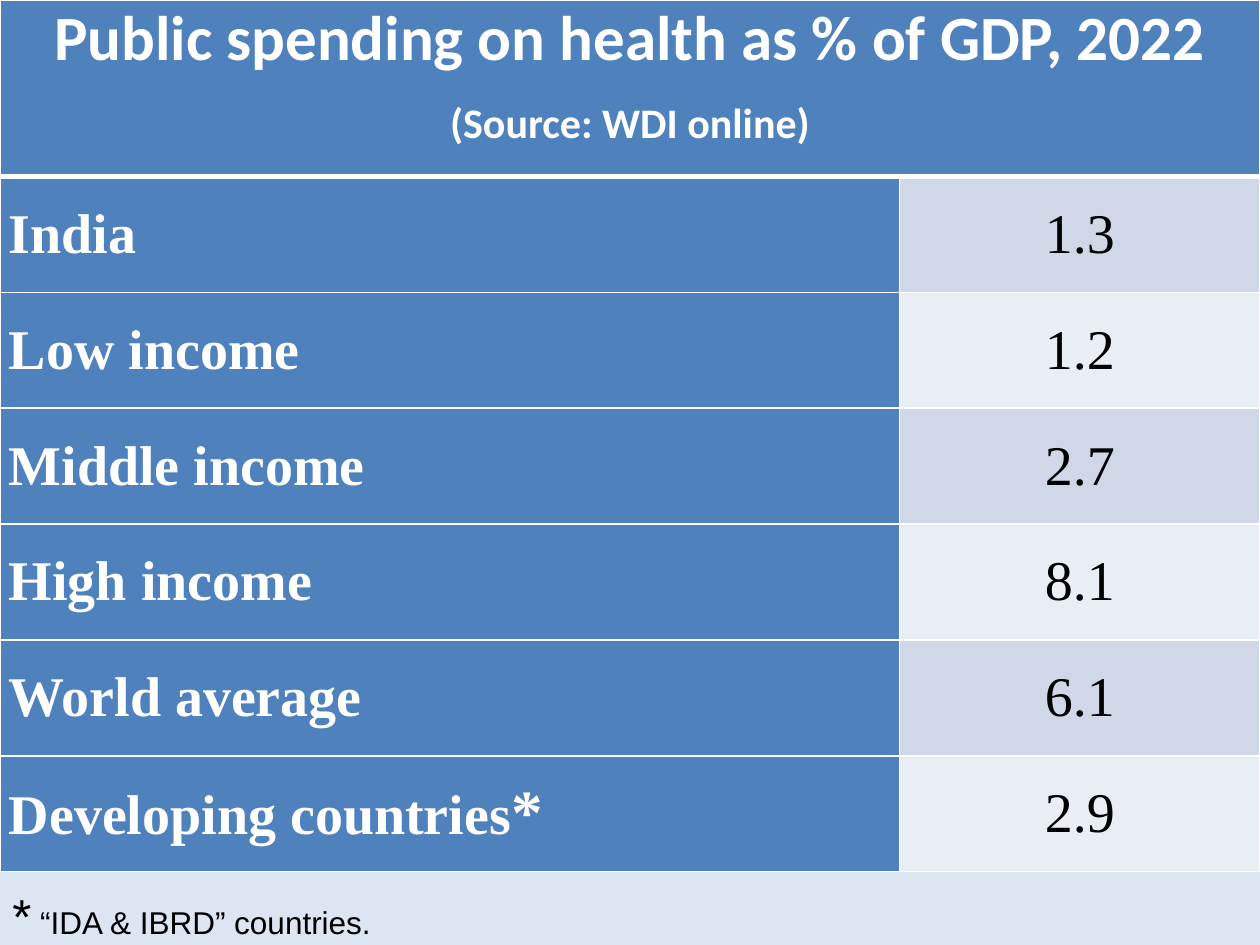
"""Build a slide with a table of public health spending as a share of GDP."""
from dataclasses import dataclass

from lxml.etree import SubElement
from pptx import Presentation
from pptx.dml.color import RGBColor
from pptx.enum.text import MSO_ANCHOR as Anchor, MSO_AUTO_SIZE as AutoSize, PP_ALIGN as Align
from pptx.oxml.ns import qn
from pptx.util import Pt

PX = 9144


@dataclass(frozen=True)
class Theme:
    background: str = "DCE6F2"
    accent: str = "4F81BD"
    bands: tuple = ("D0D8E8", "E9EDF4")
    light: str = "FFFFFF"
    dark: str = "000000"
    heading_font: str = "Calibri"
    table_font: str = "Times New Roman"
    note_font: str = "Arial"
    heading_size: int = 36
    source_size: int = 24
    table_size: int = 32
    star_size: int = 36
    note_star_size: int = 28
    note_size: int = 18


theme = Theme()


def add_text(paragraph, text, *, size, font, color=theme.light, bold=False, align=Align.LEFT):
    paragraph.alignment = align
    run = paragraph.add_run()
    run.text = text
    run.font.size = Pt(size)
    run.font.name = font
    run.font.bold = bold
    run.font.color.rgb = RGBColor.from_string(color)


def style_cell(cell, fill, bottom_width=1):
    cell.margin_left = cell.margin_right = 7 * PX
    cell.margin_top = cell.margin_bottom = 0
    properties = cell._tc.get_or_add_tcPr()
    for side in "LRTB":
        width = bottom_width if side == "B" else 1
        line = SubElement(properties, qn(f"a:ln{side}"), w=str(Pt(width)))
        SubElement(SubElement(line, qn("a:solidFill")), qn("a:srgbClr"), val=theme.light)
    cell.fill.solid()
    cell.fill.fore_color.rgb = RGBColor.from_string(fill)


spending = [
    ("India", "1.3"),
    ("Low income", "1.2"),
    ("Middle income", "2.7"),
    ("High income", "8.1"),
    ("World average", "6.1"),
    ("Developing countries", "2.9"),
]

presentation = Presentation()
presentation.slide_width = 1000 * PX
presentation.slide_height = 750 * PX
slide = presentation.slides.add_slide(presentation.slide_layouts[6])
slide.background.fill.solid()
slide.background.fill.fore_color.rgb = RGBColor.from_string(theme.background)

table = slide.shapes.add_table(len(spending) + 1, 2, 0, 0, 1000 * PX, 692 * PX).table
for column, width in zip(table.columns, (714, 286)):
    column.width = width * PX
for index, row in enumerate(table.rows):
    row.height = (92 if index else 140) * PX

heading = table.cell(0, 0)
heading.merge(table.cell(0, 1))
for cell in table.rows[0].cells:
    style_cell(cell, theme.accent, bottom_width=3)
title = heading.text_frame.paragraphs[0]
title.space_after = Pt(6)
add_text(title, "Public spending on health as % of GDP, 2022", size=theme.heading_size,
         font=theme.heading_font, bold=True, align=Align.CENTER)
source = heading.text_frame.add_paragraph()
source.space_before = source.space_after = Pt(6)
add_text(source, "(Source: WDI online)", size=theme.source_size,
         font=theme.heading_font, bold=True, align=Align.CENTER)

for index, (group, share) in enumerate(spending):
    group_cell, share_cell = table.rows[index + 1].cells
    style_cell(group_cell, theme.accent)
    style_cell(share_cell, theme.bands[index % 2])
    for cell in (group_cell, share_cell):
        cell.vertical_anchor = Anchor.MIDDLE
        cell.text_frame.paragraphs[0].space_after = Pt(6)
    add_text(group_cell.text_frame.paragraphs[0], group, size=theme.table_size,
             font=theme.table_font, bold=True)
    add_text(share_cell.text_frame.paragraphs[0], share, size=theme.table_size,
             font=theme.table_font, color=theme.dark, align=Align.CENTER)
add_text(group_cell.text_frame.paragraphs[0], "*", size=theme.star_size,
         font=theme.table_font, bold=True)

note = slide.shapes.add_textbox(0, 698 * PX, 1000 * PX, 57 * PX).text_frame
note.word_wrap = True
note.auto_size = AutoSize.SHAPE_TO_FIT_TEXT
for text, size in (("*", theme.note_star_size), (" “IDA & IBRD” countries.", theme.note_size)):
    add_text(note.paragraphs[0], text, size=size, font=theme.note_font, color=theme.dark)

presentation.save("out.pptx")
